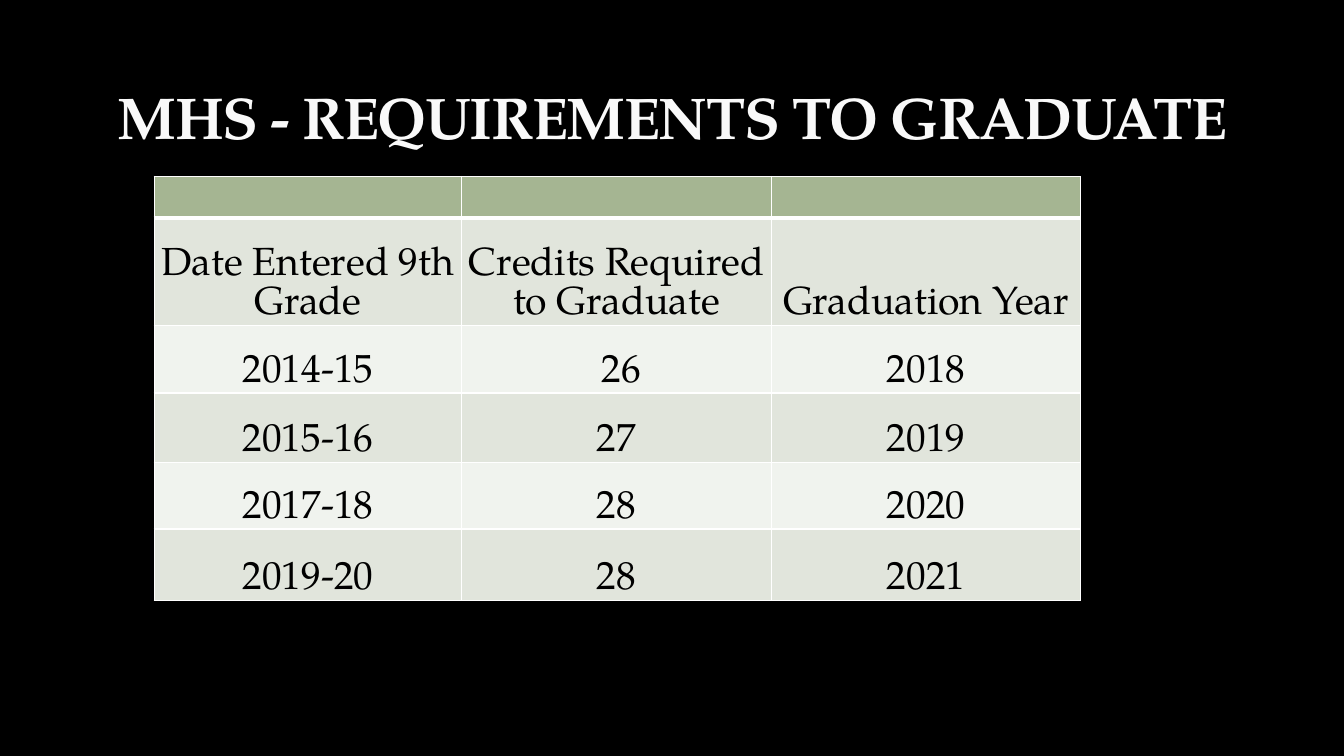
"""Build the graduation requirements slide with its credits table."""
from lxml.etree import SubElement
from pptx import Presentation
from pptx.dml.color import RGBColor
from pptx.enum.text import MSO_ANCHOR as Anchor, PP_ALIGN as Align
from pptx.oxml.ns import qn
from pptx.util import Inches, Pt

FONT = "TeX Gyre Pagella"
BLACK = RGBColor(0x00, 0x00, 0x00)
WHITE = RGBColor(0xFF, 0xFF, 0xFF)
TITLE_WHITE = RGBColor(0xF9, 0xF9, 0xF9)
HEADER_GREEN = RGBColor(0xA5, 0xB5, 0x92)
BAND_DARK = RGBColor(0xE1, 0xE5, 0xDC)
BAND_LIGHT = RGBColor(0xF0, 0xF3, 0xEE)

REQUIREMENTS = [
    ("", "", ""),
    ("Date Entered 9th Grade", "Credits Required to Graduate", "Graduation Year"),
    ("2014-15", " 26", "2018"),
    ("2015-16", "27", "2019"),
    ("2017-18", "28", "2020"),
    ("2019-20", "28", "2021"),
]
COLUMN_WIDTHS = [3.05, 3.07, 3.07]
ROW_HEIGHTS = [0.41, 1.07, 0.67, 0.69, 0.66, 0.71]


def style_run(run, size, color):
    run.font.name = FONT
    run.font.size = Pt(size)
    run.font.color.rgb = color


def set_borders(cell, bottom_width):
    properties = cell._tc.get_or_add_tcPr()
    widths = {"a:lnL": 1, "a:lnR": 1, "a:lnT": 1, "a:lnB": bottom_width}
    for position, (side, width) in enumerate(widths.items()):
        line = SubElement(properties, qn(side), w=str(Pt(width)))
        fill = SubElement(line, qn("a:solidFill"))
        SubElement(fill, qn("a:srgbClr"), val=str(WHITE))
        properties.insert(position, line)


prs = Presentation()
prs.slide_width = Inches(13.33)
prs.slide_height = Inches(7.5)
slide = prs.slides.add_slide(prs.slide_layouts[5])
slide.background.fill.solid()
slide.background.fill.fore_color.rgb = BLACK

heading = slide.shapes.title
heading.left, heading.top = Inches(0.67), Inches(0.17)
heading.width, heading.height = Inches(12), Inches(1.33)
heading_frame = heading.text_frame
heading_frame.text = "MHS - REQUIREMENTS TO GRADUATE"
heading_frame.vertical_anchor = Anchor.BOTTOM
heading_frame.margin_bottom = 0
heading_line = heading_frame.paragraphs[0]
heading_line.alignment = Align.CENTER
heading_run = heading_line.runs[0]
style_run(heading_run, 42, TITLE_WHITE)
heading_run.font.bold = True
heading_run.font._element.set("spc", "-100")

credits = slide.shapes.add_table(
    len(ROW_HEIGHTS), len(COLUMN_WIDTHS), Inches(1.53), Inches(1.75),
    Inches(sum(COLUMN_WIDTHS)), Inches(sum(ROW_HEIGHTS))).table
for column, width in zip(credits.columns, COLUMN_WIDTHS):
    column.width = Inches(width)

for row_index, (row, height, entries) in enumerate(
        zip(credits.rows, ROW_HEIGHTS, REQUIREMENTS)):
    row.height = Inches(height)
    is_header = row_index == 0
    band = BAND_DARK if row_index % 2 else BAND_LIGHT
    for cell, entry in zip(row.cells, entries):
        cell.fill.solid()
        cell.fill.fore_color.rgb = HEADER_GREEN if is_header else band
        set_borders(cell, 3 if is_header else 1)
        if is_header:
            continue
        cell.text_frame.text = entry
        cell.vertical_anchor = Anchor.BOTTOM
        cell.margin_left = cell.margin_top = cell.margin_right = Inches(0.01)
        cell.margin_bottom = 0
        paragraph = cell.text_frame.paragraphs[0]
        paragraph.alignment = Align.CENTER
        paragraph.line_spacing = Pt(28)
        style_run(paragraph.runs[0], 28, BLACK)

prs.save("out.pptx")
